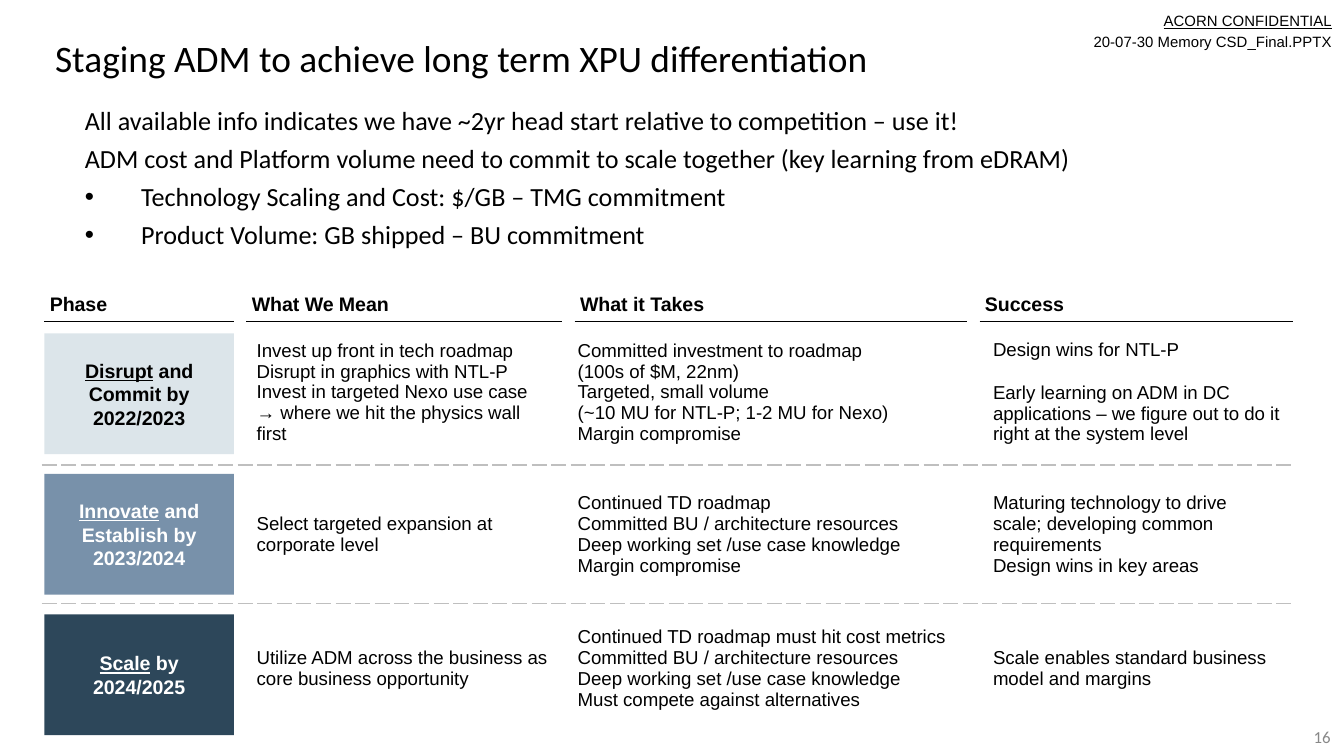
import lxml.etree
import pptx
import pptx.dml.color
import pptx.enum.shapes
import pptx.enum.text
import pptx.oxml
import pptx.oxml.ns
import pptx.util

Pt = pptx.util.Pt
RGBColor = pptx.dml.color.RGBColor
Align = pptx.enum.text.PP_ALIGN
Anchor = pptx.enum.text.MSO_ANCHOR
qn = pptx.oxml.ns.qn

BLACK = RGBColor(0x00, 0x00, 0x00)
WHITE = RGBColor(0xFF, 0xFF, 0xFF)
GREY = RGBColor(0x88, 0x88, 0x88)
DIVIDER = RGBColor(0xBF, 0xBF, 0xBF)
PALE = RGBColor(0xDC, 0xE5, 0xEA)
STEEL = RGBColor(0x78, 0x91, 0xAA)
NAVY = RGBColor(0x2D, 0x47, 0x5A)
NO_STYLE = "{2D5ABB26-0587-4C30-8999-92F81FD0307C}"

POINTS = [
    ("All available info indicates we have ~2yr head start relative to competition – use it!", False),
    ("ADM cost and Platform volume need to commit to scale together (key learning from eDRAM)", False),
    ("Technology Scaling and Cost: $/GB – TMG commitment", True),
    ("Product Volume: GB shipped – BU commitment", True),
]
HEADINGS = [("Phase", 101.5), ("What We Mean", 169.2), ("What it Takes", 210.2), ("Success", 168.1)]
PHASES = [
    ("Disrupt", " and Commit by 2022/2023", PALE, BLACK),
    ("Innovate", " and Establish by 2023/2024", STEEL, WHITE),
    ("Scale", " by 2024/2025", NAVY, WHITE),
]
COLUMN_WIDTHS = [108, 172, 222.5, 167.8]
ROW_HEIGHTS = [77.8, 74.2, 69.8]
DETAILS = [
    [
        ["Invest up front in tech roadmap", "Disrupt in graphics with NTL-P",
         "Invest in targeted Nexo use case → where we hit the physics wall first"],
        ["Committed investment to roadmap", "(100s of $M, 22nm)", "Targeted, small volume",
         "(~10 MU for NTL-P; 1-2 MU for Nexo)", "Margin compromise"],
        ["Design wins for NTL-P",
         "Early learning on ADM in DC applications – we figure out to do it right at the system level"],
    ],
    [
        ["Select targeted expansion at corporate level"],
        ["Continued TD roadmap", "Committed BU / architecture resources",
         "Deep working set /use case knowledge", "Margin compromise"],
        ["Maturing technology to drive scale; developing common requirements",
         "Design wins in key areas"],
    ],
    [
        ["Utilize ADM across the business as core business opportunity"],
        ["Continued TD roadmap must hit cost metrics", "Committed BU / architecture resources",
         "Deep working set /use case knowledge", "Must compete against alternatives"],
        ["Scale enables standard business model and margins"],
    ],
]


def add_run(paragraph, text, size, color=BLACK, font="Arial", bold=False, underline=False):
    """Append one formatted run to a paragraph."""
    run = paragraph.add_run()
    run.text = text
    run.font.name, run.font.size = font, Pt(size)
    run.font.bold, run.font.underline = bold, underline
    run.font.color.rgb = color


def add_paragraphs(frame, count):
    """Return the given number of paragraphs of an empty text frame."""
    return [frame.paragraphs[0]] + [frame.add_paragraph() for _ in range(count - 1)]


def place(shape, box):
    """Move a shape to a box of left, top, width and height."""
    shape.left, shape.top, shape.width, shape.height = map(Pt, box)


def set_frame(frame, anchor, horizontal=7.2, vertical=3.6):
    """Set wrapping, anchor and insets of a text frame."""
    frame.word_wrap = True
    frame.auto_size = pptx.enum.text.MSO_AUTO_SIZE.NONE
    frame.vertical_anchor = anchor
    frame.margin_left = frame.margin_right = Pt(horizontal)
    frame.margin_top = frame.margin_bottom = Pt(vertical)


def set_bullet(paragraph, bulleted):
    """Give a paragraph a hanging bullet, or none."""
    properties = paragraph._p.get_or_add_pPr()
    indent = Pt(30.2) if bulleted else 0
    properties.set("marL", str(indent))
    properties.set("indent", str(-indent))
    bullet = lxml.etree.SubElement(properties, qn("a:buChar" if bulleted else "a:buNone"))
    if bulleted:
        bullet.set("char", "•")


def add_title(slide, box):
    """Fill the title placeholder."""
    title = slide.shapes.title
    place(title, box)
    set_frame(title.text_frame, Anchor.TOP)
    paragraph = title.text_frame.paragraphs[0]
    paragraph.alignment, paragraph.line_spacing = Align.LEFT, 0.9
    add_run(paragraph, "Staging ADM to achieve long term XPU differentiation", 20, font="Calibri")


def add_points(slide, box):
    """Fill the body placeholder with the key points."""
    body = slide.placeholders[1]
    place(body, box)
    set_frame(body.text_frame, Anchor.TOP)
    for paragraph, (text, bulleted) in zip(add_paragraphs(body.text_frame, len(POINTS)), POINTS):
        paragraph.line_spacing, paragraph.space_before = 0.9, Pt(5.3)
        set_bullet(paragraph, bulleted)
        add_run(paragraph, text, 14, font="Calibri")


def add_border(cell, side):
    """Draw a dashed divider on one side of a table cell."""
    border = pptx.oxml.parse_xml(
        f'<a:{side} {pptx.oxml.ns.nsdecls("a")} w="{Pt(1)}"><a:solidFill><a:srgbClr val="{DIVIDER}"/>'
        f'</a:solidFill><a:prstDash val="sysDash"/></a:{side}>')
    cell._tc.get_or_add_tcPr().insert(0, border)


def add_details(slide, box):
    """Build the table of phase details, with an empty column behind the phase boxes."""
    table = slide.shapes.add_table(len(ROW_HEIGHTS), len(COLUMN_WIDTHS), *map(Pt, box)).table
    table.first_row = table.horz_banding = False
    table._tbl.tblPr.find(qn("a:tableStyleId")).text = NO_STYLE
    for column, width in zip(table.columns, COLUMN_WIDTHS):
        column.width = Pt(width)
    for index, (row, height, texts) in enumerate(zip(table.rows, ROW_HEIGHTS, DETAILS)):
        row.height = Pt(height)
        for cell, lines in zip(row.cells, [[]] + texts):
            cell.fill.background()
            cell.vertical_anchor = Anchor.MIDDLE
            if index < len(ROW_HEIGHTS) - 1:
                add_border(cell, "lnB")
            if index > 0:
                add_border(cell, "lnT")
            for paragraph, line in zip(add_paragraphs(cell.text_frame, len(lines)), lines):
                add_run(paragraph, line, 10)
    table.cell(0, 3).text_frame.paragraphs[1].space_before = Pt(11.5)


def add_phases(slide, box):
    """Stack the phase boxes evenly from top to bottom."""
    left, top, width, height = box
    box_height = 64.8
    pitch = (height - box_height) / (len(PHASES) - 1)
    for index, (name, rest, fill, color) in enumerate(PHASES):
        bounds = (left, top + index * pitch, width, box_height)
        shape = slide.shapes.add_shape(pptx.enum.shapes.MSO_SHAPE.RECTANGLE, *map(Pt, bounds))
        shape.shadow.inherit = False
        shape.fill.solid()
        shape.fill.fore_color.rgb = fill
        shape.line.fill.background()
        set_frame(shape.text_frame, Anchor.MIDDLE)
        paragraph = shape.text_frame.paragraphs[0]
        paragraph.alignment = Align.CENTER
        add_run(paragraph, name, 10.5, color, bold=True, underline=True)
        add_run(paragraph, rest, 10.5, color, bold=True)


def add_headings(slide, box):
    """Lay out the underlined column headings with equal gaps."""
    left, top, width, height = box
    gap = (width - sum(size for _, size in HEADINGS)) / (len(HEADINGS) - 1)
    for text, size in HEADINGS:
        shapes = slide.shapes.add_group_shape().shapes
        frame = shapes.add_textbox(*map(Pt, (left, top, size, height))).text_frame
        set_frame(frame, Anchor.BOTTOM, 2.9, 2.9)
        add_run(frame.paragraphs[0], text, 10.5, bold=True)
        ends = (left, top + height, left + size, top + height)
        rule = shapes.add_connector(pptx.enum.shapes.MSO_CONNECTOR.STRAIGHT, *map(Pt, ends))
        rule.line.color.rgb, rule.line.width = BLACK, Pt(0.75)
        lxml.etree.SubElement(rule._element.spPr, qn("a:effectLst"))
        left += size + gap


def add_marking(slide, box):
    """Write the confidentiality note and file name."""
    frame = slide.shapes.add_textbox(*map(Pt, box)).text_frame
    set_frame(frame, Anchor.TOP, 7.2, 7.2)
    lines = [("ACORN CONFIDENTIAL", True), ("20-07-30 Memory CSD_Final.PPTX", False)]
    for paragraph, (text, underline) in zip(add_paragraphs(frame, len(lines)), lines):
        paragraph.alignment, paragraph.line_spacing = Align.RIGHT, 1.15
        add_run(paragraph, text, 8, underline=underline)


def add_page_number(slide, box):
    """Write the page number."""
    frame = slide.shapes.add_textbox(*map(Pt, box)).text_frame
    set_frame(frame, Anchor.MIDDLE)
    frame.paragraphs[0].alignment = Align.RIGHT
    add_run(frame.paragraphs[0], "16", 9, GREY, "Calibri")


def main():
    """Build and save the presentation."""
    presentation = pptx.Presentation()
    presentation.slide_width, presentation.slide_height = Pt(720), Pt(405)
    slide = presentation.slides.add_slide(presentation.slide_layouts[1])
    add_marking(slide, (558.7, -2.2, 162, 28.8))
    add_title(slide, (22.3, 18, 671, 47.5))
    add_points(slide, (38.2, 54, 643.7, 321.1))
    add_details(slide, (22.3, 171.4, 670.3, 221.8))
    add_phases(slide, (23.8, 178.6, 101.5, 215.3))
    add_headings(slide, (23.8, 154.1, 669.1, 18))
    add_page_number(slide, (558, 383.8, 162, 21.6))
    presentation.save("out.pptx")


if __name__ == "__main__":
    main()
